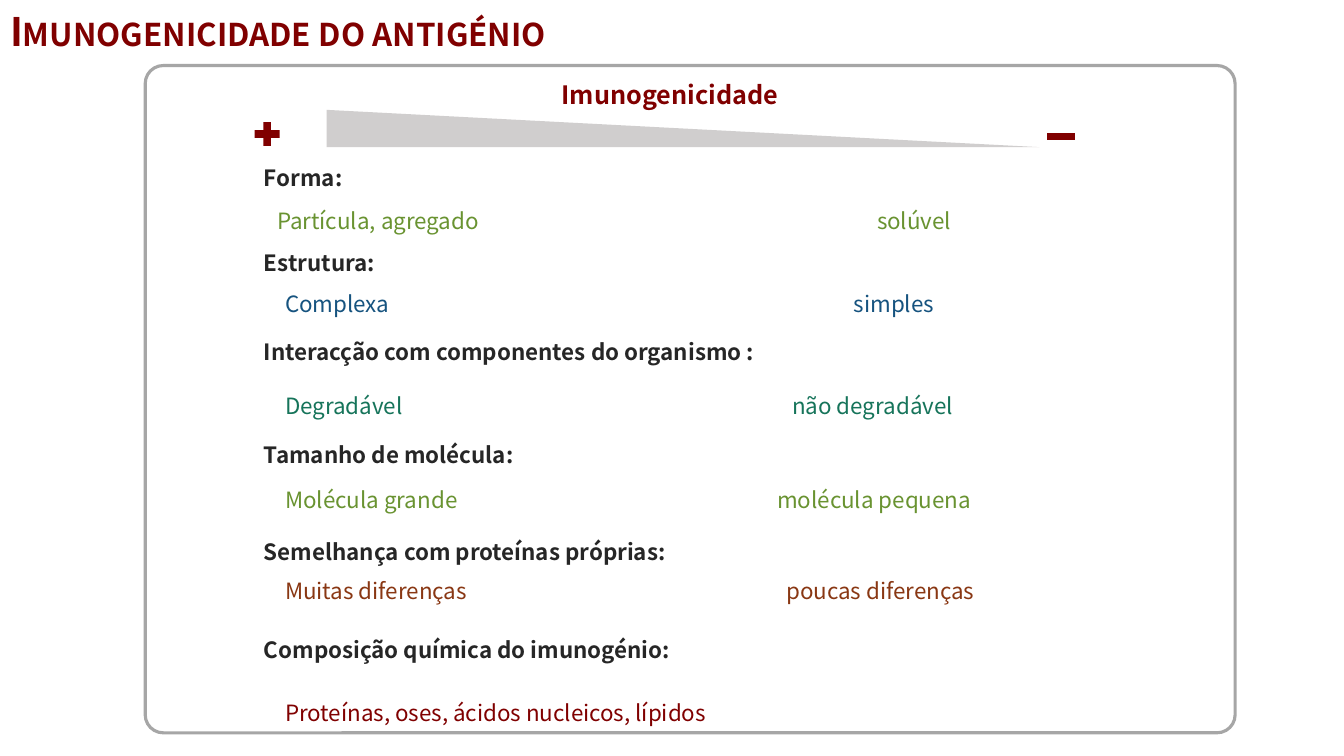
"""Build the slide on antigen immunogenicity."""
from dataclasses import dataclass

import lxml.etree
import pptx
import pptx.dml.color
import pptx.enum.shapes
import pptx.enum.text
import pptx.oxml
import pptx.oxml.ns
import pptx.shapes.autoshape
import pptx.util

Inches = pptx.util.Inches
RGBColor = pptx.dml.color.RGBColor
MSO_SHAPE = pptx.enum.shapes.MSO_SHAPE
PP_ALIGN = pptx.enum.text.PP_ALIGN
qn = pptx.oxml.ns.qn

FONT = "Noto Sans CJK SC"
MAROON = RGBColor(0x80, 0x00, 0x00)
DARK = RGBColor(0x26, 0x26, 0x26)
GREEN = RGBColor(0x69, 0x93, 0x31)
BLUE = RGBColor(0x16, 0x53, 0x7F)
TEAL = RGBColor(0x16, 0x74, 0x5A)
BROWN = RGBColor(0x89, 0x37, 0x13)
WEDGE_GRAY = RGBColor(0xD0, 0xCE, 0xCE)
FRAME_GRAY = RGBColor(0xA6, 0xA6, 0xA6)
INSET = 0.1
HEADING_LEFT = 2.52


@dataclass(frozen=True)
class Factor:
    heading: str
    heading_top: float
    strong: str
    strong_top: float
    color: RGBColor
    weak: str = ""
    weak_left: float = 0
    left: float = 2.73
    width: float = 9.23


@dataclass(frozen=True)
class Symbol:
    kind: MSO_SHAPE
    left: float
    top: float
    width: float
    height: float
    color: RGBColor


FACTORS = [
    Factor("Forma:", 1.58, "Partícula, agregado", 1.95, GREEN, "solúvel", 8.7, left=2.65, width=9.15),
    Factor("Estrutura:", 2.42, "Complexa", 2.78, BLUE, "simples", 8.47),
    Factor("Interacção com componentes do organismo :", 3.31, "Degradável", 3.79, TEAL, "não degradável", 7.86),
    Factor("Tamanho de molécula:", 4.33, "Molécula grande", 4.72, GREEN, "molécula pequena", 7.71),
    Factor("Semelhança com proteínas próprias:", 5.29, "Muitas diferenças", 5.62, BROWN, "poucas diferenças", 7.8),
    Factor("Composição química do imunogénio:", 6.26, "Proteínas, oses, ácidos nucleicos, lípidos", 6.83,
           MAROON, width=6.67),
]

SYMBOLS = [
    Symbol(MSO_SHAPE.RIGHT_TRIANGLE, 3.24, 1.09, 7.07, 0.37, WEDGE_GRAY),
    Symbol(MSO_SHAPE.MATH_PLUS, 2.48, 1.17, 0.34, 0.32, MAROON),
    Symbol(MSO_SHAPE.MATH_MINUS, 10.33, 1.19, 0.38, 0.33, MAROON),
]


def write_text(sp, text: str, *, size: float = 16, color: RGBColor = DARK, bold: bool = False,
               align: PP_ALIGN = PP_ALIGN.LEFT, spacing: float = 1.0, tab: float = 0,
               small_caps: bool = False, shadow_angle: int | None = None) -> None:
    """Fill a text shape with one formatted paragraph."""
    tf = sp.text_frame
    tf.word_wrap = True
    tf.auto_size = pptx.enum.text.MSO_AUTO_SIZE.SHAPE_TO_FIT_TEXT
    tf.vertical_anchor = pptx.enum.text.MSO_ANCHOR.TOP
    p = tf.paragraphs[0]
    p.alignment = align
    p.line_spacing = spacing
    if tab:
        tabs = lxml.etree.SubElement(p._p.get_or_add_pPr(), qn("a:tabLst"))
        lxml.etree.SubElement(tabs, qn("a:tab"), pos=str(Inches(tab)), algn="l")
    r = p.add_run()
    r.text = text
    r.font.size = pptx.util.Pt(size)
    r.font.bold = bold
    r.font.color.rgb = color
    r.font.name = FONT
    rpr = r._r.get_or_add_rPr()
    if small_caps:
        rpr.set("cap", "small")
    if shadow_angle is not None:
        effects = pptx.oxml.parse_xml(
            '<a:effectLst xmlns:a="http://schemas.openxmlformats.org/drawingml/2006/main">'
            f'<a:outerShdw blurRad="38100" dist="38100" dir="{shadow_angle * 60000}">'
            '<a:srgbClr val="000000"><a:alpha val="43000"/></a:srgbClr></a:outerShdw></a:effectLst>')
        rpr.find(qn("a:latin")).addprevious(effects)


def add_text(slide, text: str, left: float, top: float, width: float, height: float, **fmt) -> None:
    """Add a text box holding one formatted paragraph."""
    sp = slide.shapes.add_textbox(Inches(left), Inches(top), Inches(width), Inches(height))
    write_text(sp, text, **fmt)


def add_factor(slide, factor: Factor) -> None:
    """Add a factor's heading and its strong and weak ends."""
    add_text(slide, factor.heading, HEADING_LEFT, factor.heading_top, 6.4, 0.37, bold=True)
    text = f"{factor.strong}\t{factor.weak}" if factor.weak else factor.strong
    tab = factor.weak_left - factor.left - INSET if factor.weak else 0
    add_text(slide, text, factor.left, factor.strong_top, factor.width, 0.42,
             color=factor.color, spacing=1.2, tab=tab)


def add_symbol(slide, symbol: Symbol) -> None:
    """Add a filled preset shape without outline."""
    sp = slide.shapes.add_shape(symbol.kind, Inches(symbol.left), Inches(symbol.top),
                                Inches(symbol.width), Inches(symbol.height))
    sp.shadow.inherit = False
    sp.fill.solid()
    sp.fill.fore_color.rgb = symbol.color
    sp.line.fill.background()


def add_frame(slide) -> None:
    """Add the rounded outline around the factors."""
    sp = slide.shapes.add_shape(MSO_SHAPE.ROUNDED_RECTANGLE, Inches(1.44), Inches(0.65),
                                Inches(10.81), Inches(6.62))
    sp.adjustments[0] = 0.027
    sp.shadow.inherit = False
    sp.fill.background()
    sp.line.color.rgb = FRAME_GRAY
    sp.line.width = pptx.util.Pt(2.25)


def main() -> None:
    """Create and save the presentation."""
    prs = pptx.Presentation()
    prs.slide_width, prs.slide_height = Inches(13.33), Inches(7.5)
    s = prs.slides.add_slide(prs.slide_layouts[5])
    title = s.shapes.title
    title.left, title.top, title.width, title.height = Inches(0), Inches(0.02), Inches(11.53), Inches(0.57)
    write_text(title, "Imunogenicidade do antigénio", size=28, color=MAROON, bold=True,
               align=PP_ALIGN.JUSTIFY, small_caps=True, shadow_angle=180)
    for factor in FACTORS:
        add_factor(s, factor)
    add_text(s, "Imunogenicidade", 5.07, 0.74, 3.15, 0.4, size=18, color=MAROON, bold=True,
             align=PP_ALIGN.CENTER, shadow_angle=45)
    for symbol in SYMBOLS:
        add_symbol(s, symbol)
    add_frame(s)
    prs.save("out.pptx")


if __name__ == "__main__":
    main()
